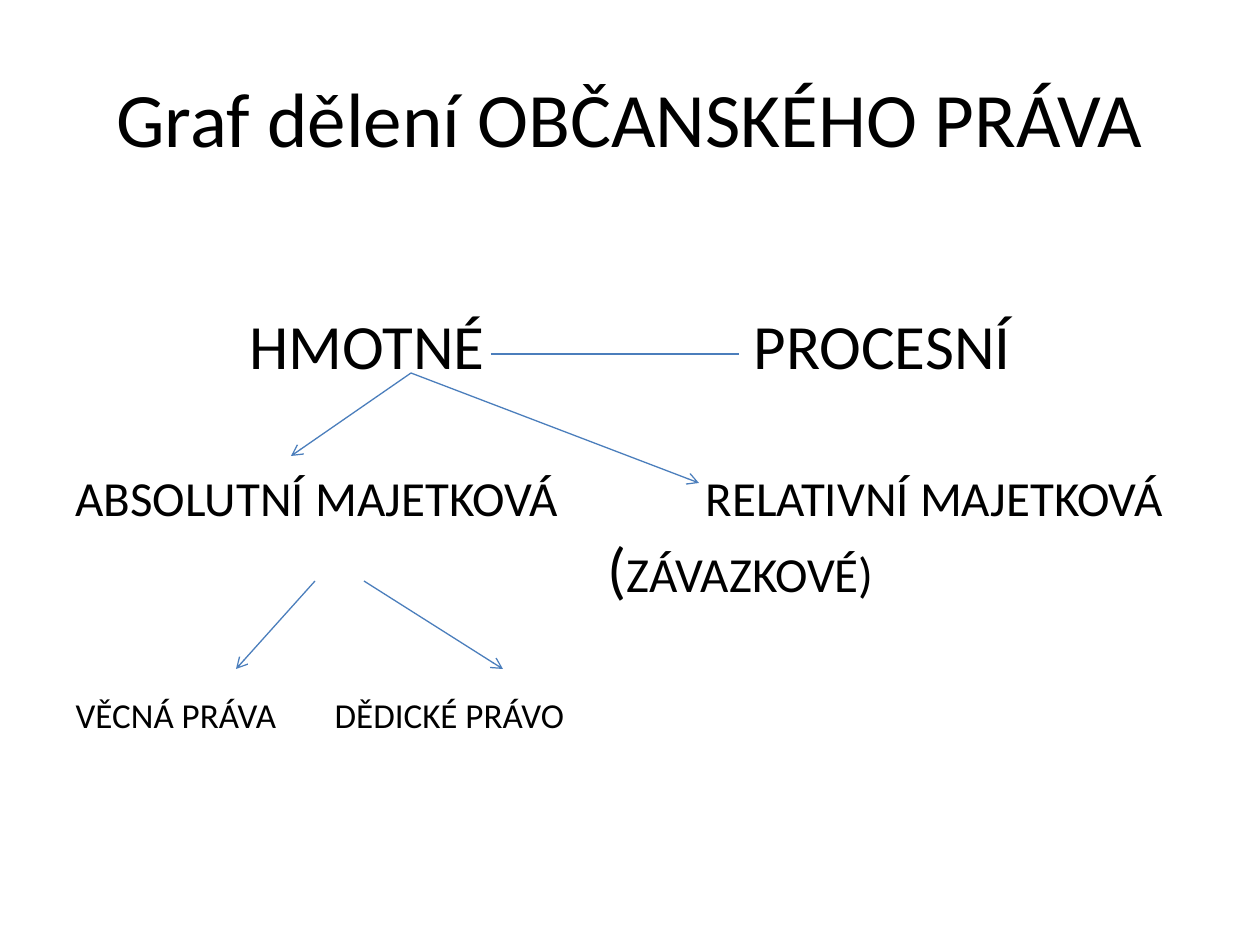
"""Build a slide that charts the division of civil law."""
from dataclasses import dataclass

from lxml.etree import SubElement
from pptx import Presentation
from pptx.dml.color import RGBColor
from pptx.enum.shapes import MSO_CONNECTOR as Connector
from pptx.enum.text import MSO_ANCHOR as Anchor
from pptx.enum.text import MSO_AUTO_SIZE as AutoSize
from pptx.enum.text import PP_ALIGN as Align
from pptx.oxml.ns import qn
from pptx.util import Emu, Pt

PX_PER_INCH = 126
FONT = "Calibri"
COLORS = {"text": "000000", "line": "4B7EBC", "background": "FFFFFF"}


@dataclass(frozen=True)
class Span:
    text: str
    size: int


@dataclass(frozen=True)
class Row:
    spans: tuple[Span, ...]
    indent: int = 0
    tab: int = 126
    gap: int = 0


@dataclass(frozen=True)
class Link:
    start: tuple[int, int]
    end: tuple[int, int]
    arrow: bool = True


ROWS = (
    Row((Span("HMOTNÉ\tPROCESNÍ", 36),), indent=174, tab=678),
    Row((Span("ABSOLUTNÍ MAJETKOVÁ\tRELATIVNÍ MAJETKOVÁ", 28),), tab=630, gap=86),
    Row((Span("(", 36), Span("ZÁVAZKOVÉ)", 28)), indent=532, gap=3),
    Row((Span("VĚCNÁ PRÁVA\tDĚDICKÉ PRÁVO", 20),), tab=259, gap=88),
)
LINKS = (
    Link((411, 373), (699, 483)),
    Link((411, 373), (291, 456)),
    Link((364, 581), (503, 669)),
    Link((315, 581), (236, 669)),
    Link((491, 354), (739, 354), arrow=False),
)


def px(length: int) -> Emu:
    return Emu(round(length * 914400 / PX_PER_INCH))


def color(name: str) -> RGBColor:
    return RGBColor.from_string(COLORS[name])


def place(box, left: int, top: int, width: int, height: int) -> None:
    box.left, box.top, box.width, box.height = map(px, (left, top, width, height))
    box.text_frame.word_wrap = True
    box.text_frame.auto_size = AutoSize.NONE


def add_text(para, text: str, *, size: int) -> None:
    span = para.add_run()
    span.text = text
    span.font.name = FONT
    span.font.size = Pt(size)
    span.font.color.rgb = color("text")


def add_row(para, row: Row) -> None:
    para.alignment = Align.LEFT
    para.space_before = px(row.gap)
    props = para._p.get_or_add_pPr()
    props.set("marL", "0")
    props.set("indent", str(px(row.indent)))
    props.set("defTabSz", str(px(row.tab)))
    SubElement(props, qn("a:buNone"))
    for span in row.spans:
        add_text(para, span.text, size=span.size)


def add_link(page, link: Link) -> None:
    points = map(px, (*link.start, *link.end))
    connector = page.shapes.add_connector(Connector.STRAIGHT, *points)
    connector.line.color.rgb = color("line")
    connector.line.width = Pt(0.75)
    if link.arrow:
        SubElement(connector.line._get_or_add_ln(), qn("a:tailEnd"), type="arrow")
    SubElement(connector._element.spPr, qn("a:effectLst"))


def main() -> None:
    deck = Presentation()
    deck.slide_width, deck.slide_height = px(1260), px(945)
    page = deck.slides.add_slide(deck.slide_layouts[1])
    page.background.fill.solid()
    page.background.fill.fore_color.rgb = color("background")

    title, body = page.placeholders
    place(title, 63, 38, 1134, 157)
    title.text_frame.vertical_anchor = Anchor.MIDDLE
    heading = title.text_frame.paragraphs[0]
    heading.alignment = Align.CENTER
    add_text(heading, "Graf dělení OBČANSKÉHO PRÁVA", size=44)

    place(body, 63, 220, 1134, 624)
    frame = body.text_frame
    frame.vertical_anchor = Anchor.TOP
    frame.margin_top = px(86)
    for index, row in enumerate(ROWS):
        add_row(frame.add_paragraph() if index else frame.paragraphs[0], row)

    for link in LINKS:
        add_link(page, link)
    deck.save("out.pptx")


if __name__ == "__main__":
    main()
